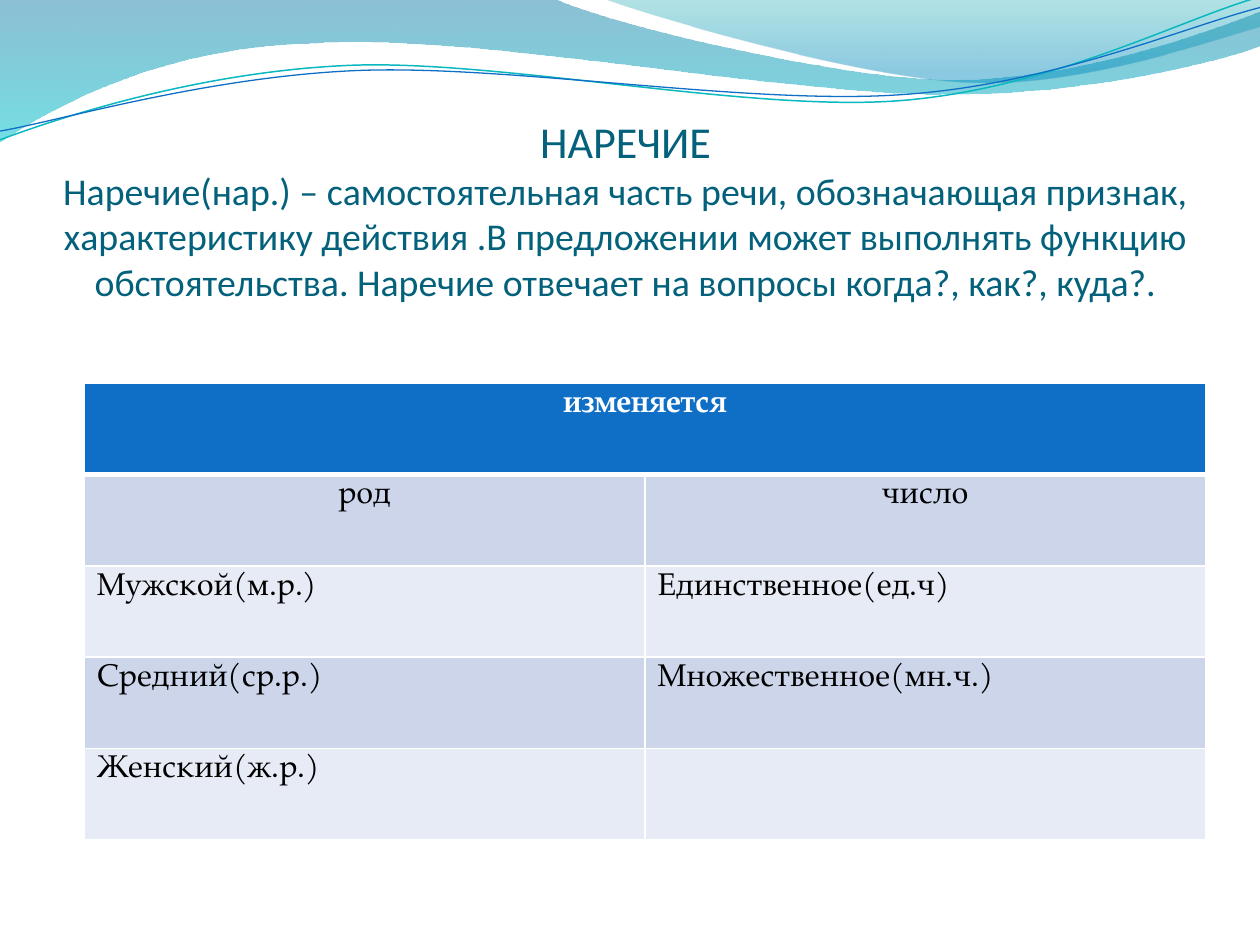
from dataclasses import dataclass

from lxml import etree
from pptx import Presentation
from pptx.dml.color import RGBColor
from pptx.enum.text import MSO_ANCHOR, PP_ALIGN
from pptx.oxml.ns import qn
from pptx.util import Pt

CENTER, LEFT = PP_ALIGN.CENTER, PP_ALIGN.LEFT
BOTTOM = MSO_ANCHOR.BOTTOM

WHITE = RGBColor(0xFF, 0xFF, 0xFF)
BLACK = RGBColor(0x00, 0x00, 0x00)
TITLE_COLOR = RGBColor(0x04, 0x61, 0x7B)
BLUE = RGBColor(0x0F, 0x6F, 0xC6)
TEAL = RGBColor(0x0A, 0xB8, 0xBF)
BAND_DARK = RGBColor(0xCC, 0xD5, 0xEA)
BAND_LIGHT = RGBColor(0xE7, 0xEB, 0xF5)

TITLE_FONT = "Calibri"
TABLE_FONT = "TeX Gyre Pagella"

Point = tuple[float, float]


@dataclass
class Stop:
    position: float
    color: RGBColor
    opacity: int


@dataclass
class Wave:
    """An outline in points; a segment has one point (line) or three (Bezier curve)."""
    start: Point
    segments: list[tuple[Point, ...]]
    stops: tuple[Stop, ...] = ()
    line_color: RGBColor | None = None
    line_width: float = 0


WAVES = [
    Wave((0, 0), [
        ((316.8, -0.7),),
        ((342.7, 12.2), (478.1, 45.4), (545.8, 45.4)),
        ((614.2, 45.4), (689.8, 18.7), (720, 6.5)),
        ((720.7, 25.9),),
        ((707.8, 31.7), (626.4, 54.7), (537.1, 54)),
        ((446.4, 54), (275, 20.2), (185, 24.5)),
        ((92.9, 25.9), (33.1, 59.8), (-0.7, 81.4)),
        ((0, 0),),
    ], stops=(Stop(0, RGBColor(0x00, 0x74, 0xA1), 45),
              Stop(1, RGBColor(0x00, 0xC6, 0xCF), 55))),
    Wave((344.9, -0.7), [
        ((366.5, 7.9), (491, 44.6), (553.7, 46.8)),
        ((616.3, 49.7), (691.9, 23), (720, 15.1)),
        ((720, 0),),
        ((344.9, -0.7),),
    ], stops=(Stop(0, RGBColor(0x00, 0xA1, 0xA9), 30),
              Stop(0.8, RGBColor(0x00, 0x8B, 0xBF), 45))),
    Wave((0, 79.9), [
        ((34.6, 67), (113.8, 41), (199.4, 37.4)),
        ((284.4, 33.8), (427, 64.1), (513.4, 57.6)),
        ((599.8, 51.1), (675.4, 10.8), (718.6, -1.4)),
    ], line_color=TEAL, line_width=0.85),
    Wave((0, 74.9), [
        ((33.8, 69.1), (118.1, 43.9), (203.8, 40.3)),
        ((290.2, 36.7), (429.8, 60.5), (516.2, 54)),
        ((601.9, 48.2), (677.5, 15.1), (720, 4.3)),
    ], line_color=BLUE, line_width=0.75),
]

TITLE_RUNS = [
    ("НАРЕЧИЕ", 25.2),
    ("Наречие(нар.) – самостоятельная часть речи, обозначающая признак, "
     "характеристику действия .В предложении может выполнять функцию "
     "обстоятельства. Наречие отвечает на вопросы когда?, как?, куда?.", 21.6),
]

TABLE_ROWS = [
    ("изменяется", ""),
    ("род", "число"),
    ("Мужской(м.р.)", "Единственное(ед.ч)"),
    ("Средний(ср.р.)", "Множественное(мн.ч.)"),
    ("Женский(ж.р.)", ""),
]


def bend_segments(shape, segments: list[tuple[Point, ...]]) -> None:
    """Turn each three-point run of straight lines into one Bezier curve."""
    lines = iter(list(shape.element.spPr.iter(qn("a:lnTo"))))
    for segment in segments:
        parts = [next(lines) for _ in segment]
        if len(parts) == 3:
            curve = etree.Element(qn("a:cubicBezTo"))
            parts[0].addprevious(curve)
            for part in parts:
                curve.append(part[0])
                part.getparent().remove(part)


def draw_wave(slide, wave: Wave) -> None:
    builder = slide.shapes.build_freeform(Pt(wave.start[0]), Pt(wave.start[1]))
    points = [(Pt(x), Pt(y)) for segment in wave.segments for x, y in segment]
    builder.add_line_segments(points, close=False)
    shape = builder.convert_to_shape()
    bend_segments(shape, wave.segments)
    shape.shadow.inherit = False
    if wave.line_color is None:
        shape.line.fill.background()
    else:
        shape.line.color.rgb = wave.line_color
        shape.line.width = Pt(wave.line_width)
    if not wave.stops:
        shape.fill.background()
        return
    outline = next(shape.element.spPr.iter(qn("a:lnTo"))).getparent()
    etree.SubElement(outline, qn("a:close"))
    shape.fill.gradient()
    shape.fill.gradient_angle = 270
    for target, stop in zip(shape.fill.gradient_stops, wave.stops):
        target.position = stop.position
        target.color.rgb = stop.color
    colors = shape.element.spPr.find(qn("a:gradFill")).iter(qn("a:srgbClr"))
    for color, stop in zip(list(colors), wave.stops):
        etree.SubElement(color, qn("a:alpha"), val=str(stop.opacity * 1000))


def add_run(paragraph, text: str, font: str, size: float, color: RGBColor,
            bold: bool = False) -> None:
    run = paragraph.add_run()
    run.text = text
    run.font.name = font
    run.font.size = Pt(size)
    run.font.bold = bold
    run.font.color.rgb = color


def draw_title(slide) -> None:
    frame = slide.shapes.add_textbox(Pt(31), Pt(21.6), Pt(653), Pt(152)).text_frame
    frame.word_wrap = True
    frame.vertical_anchor = BOTTOM
    frame.margin_left = frame.margin_right = frame.margin_bottom = Pt(0)
    frame.margin_top = Pt(3.6)
    paragraph = frame.paragraphs[0]
    paragraph.alignment = CENTER
    for index, (text, size) in enumerate(TITLE_RUNS):
        if index:
            paragraph.add_line_break()
        add_run(paragraph, text, TITLE_FONT, size, TITLE_COLOR)


def set_borders(cell, widths: dict[str, float]) -> None:
    properties = cell._tc.get_or_add_tcPr()
    for index, (side, width) in enumerate(widths.items()):
        line = etree.Element(qn(f"a:ln{side}"), w=str(Pt(width)))
        fill = etree.SubElement(line, qn("a:solidFill"))
        etree.SubElement(fill, qn("a:srgbClr"), val=str(WHITE))
        properties.insert(index, line)


def draw_table(slide) -> None:
    frame = slide.shapes.add_table(len(TABLE_ROWS), 2, Pt(48.2), Pt(219),
                                   Pt(640.8), Pt(261))
    table = frame.table
    for row, texts in enumerate(TABLE_ROWS):
        header = row == 0
        band = BAND_DARK if row % 2 else BAND_LIGHT
        for column, text in enumerate(texts):
            cell = table.cell(row, column)
            cell.fill.solid()
            cell.fill.fore_color.rgb = BLUE if header else band
            set_borders(cell, {"L": 1, "R": 1, "T": 3 if row == 1 else 1,
                               "B": 3 if header else 1})
            if text:
                paragraph = cell.text_frame.paragraphs[0]
                paragraph.alignment = CENTER if row < 2 else LEFT
                add_run(paragraph, text, TABLE_FONT, 18,
                        WHITE if header else BLACK, header)
    table.cell(0, 0).merge(table.cell(0, 1))


def main() -> None:
    presentation = Presentation()
    presentation.slide_width = Pt(720)
    presentation.slide_height = Pt(540)
    slide = presentation.slides.add_slide(presentation.slide_layouts[6])
    for wave in WAVES:
        draw_wave(slide, wave)
    draw_title(slide)
    draw_table(slide)
    presentation.save("out.pptx")


if __name__ == "__main__":
    main()
